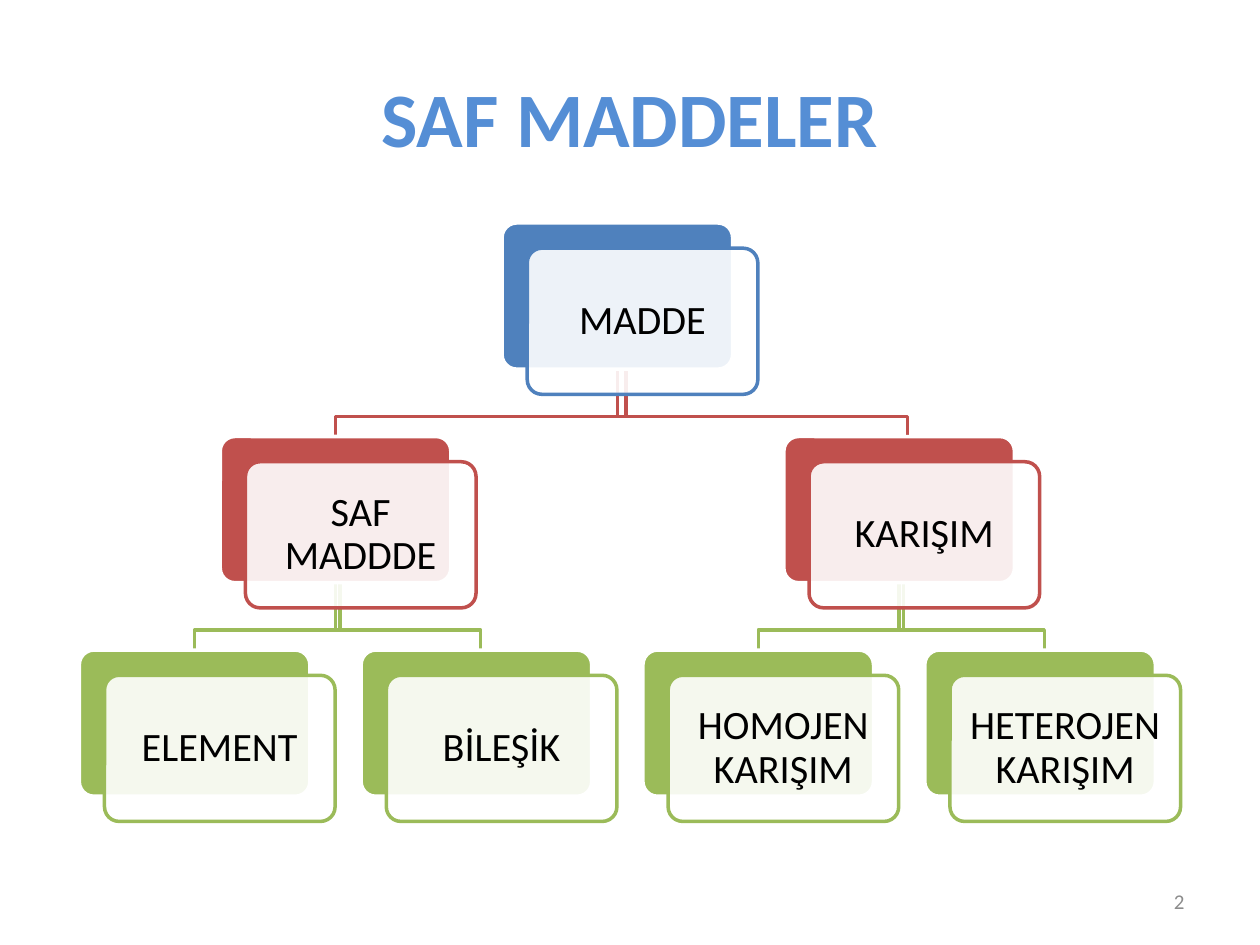
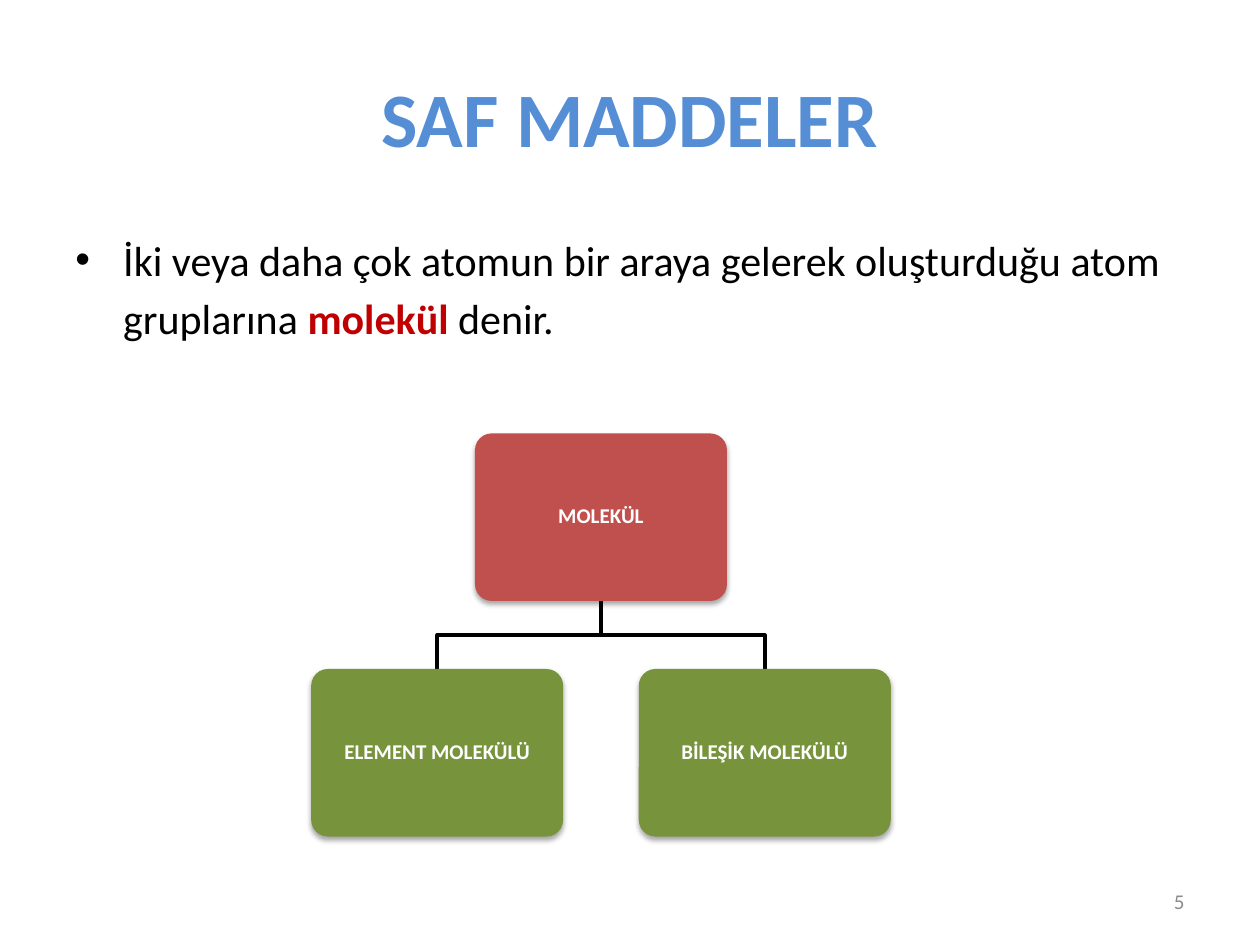
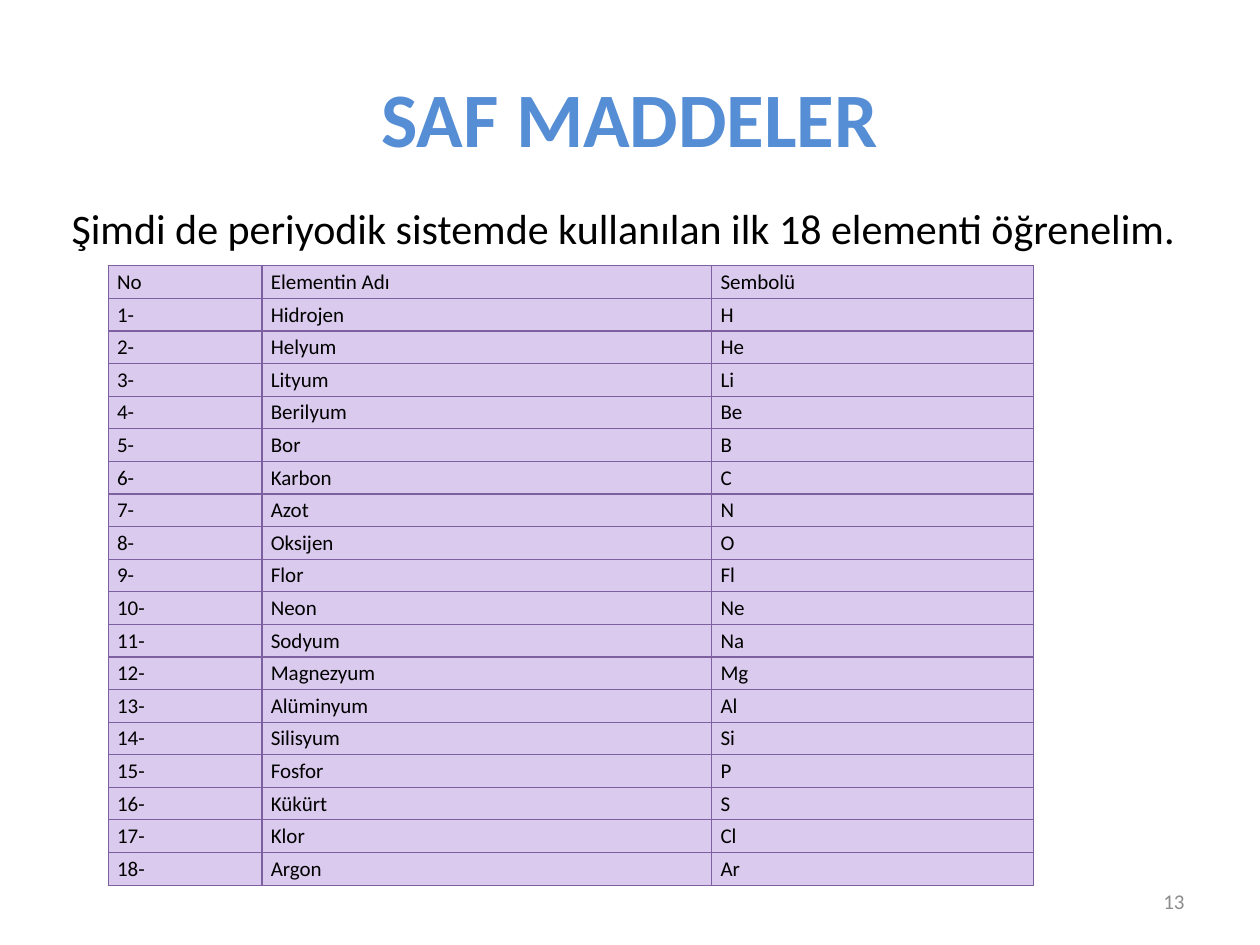
from lxml.etree import SubElement
from pptx import Presentation
from pptx.dml.color import RGBColor
from pptx.enum.shapes import MSO_SHAPE
from pptx.enum.text import MSO_ANCHOR, PP_ALIGN
from pptx.oxml.ns import qn
from pptx.util import Inches, Pt

SLIDE_W, SLIDE_H = 10, 7.5
FONT = "Calibri"
BLACK, WHITE, RED_TEXT = "000000", "FFFFFF", "C00000"
TITLE_BLUE, NUMBER_GRAY = "558ED5", "8C8C8C"
BLUE, RED, GREEN, DARK_GREEN = "4F81BD", "C0504D", "9BBB59", "77933C"
TABLE_FILL, TABLE_LINE = "DACAED", "7D60A0"

# Tree nodes: text, column, row, index of the parent
MATTER_TREE = [
    ("MADDE", 1.5, 0, None),
    ("SAF MADDDE", 0.5, 1, 0),
    ("KARIŞIM", 2.5, 1, 0),
    ("ELEMENT", 0, 2, 1),
    ("BİLEŞİK", 1, 2, 1),
    ("HOMOJEN KARIŞIM", 2, 2, 2),
    ("HETEROJEN KARIŞIM", 3, 2, 2),
]
MOLECULE_TREE = [
    ("MOLEKÜL", 0.5, 0, None),
    ("ELEMENT MOLEKÜLÜ", 0, 1, 0),
    ("BİLEŞİK MOLEKÜLÜ", 1, 1, 0),
]
# Per tree: grid size, card size, colours by row, elbow stretch and bend share
MATTER_STYLE = dict(columns=4, rows=3, card=(1.83, 1.16), fills=[BLUE, RED, GREEN],
                    lines=[BLUE, RED, GREEN], stretch=1.03, bend=0.68, layered=True)
MOLECULE_STYLE = dict(columns=2, rows=2, card=(2, 1.33), fills=[RED, DARK_GREEN],
                      lines=[BLACK, BLACK], stretch=1, bend=0.5, layered=False)
FRONT_SHIFT = 0.2

ELEMENTS = [
    ("Hidrojen", "H"), ("Helyum", "He"), ("Lityum", "Li"), ("Berilyum", "Be"),
    ("Bor", "B"), ("Karbon", "C"), ("Azot", "N"), ("Oksijen", "O"), ("Flor", "Fl"),
    ("Neon", "Ne"), ("Sodyum", "Na"), ("Magnezyum", "Mg"), ("Alüminyum", "Al"),
    ("Silisyum", "Si"), ("Fosfor", "P"), ("Kükürt", "S"), ("Klor", "Cl"), ("Argon", "Ar"),
]


def color(value):
    return RGBColor.from_string(value)


def inches(*values):
    return [Inches(value) for value in values]


def assign(target, values):
    for name, value in values.items():
        setattr(target, name, value)


def write(frame, spans, size, para_format=None, **frame_format):
    """Fill a text frame with one paragraph of (text, colour, bold) spans."""
    assign(frame, dict(word_wrap=True, **frame_format))
    para = frame.paragraphs[0]
    assign(para, para_format or {})
    for text, hue, bold in spans:
        span = para.add_run()
        span.text = text
        assign(span.font, dict(name=FONT, size=Pt(size), bold=bold))
        span.font.color.rgb = color(hue)
    return para


def add_text(page, box, spans, size, para_format=None, **frame_format):
    frame = page.shapes.add_textbox(*inches(*box)).text_frame
    return write(frame, spans, size, para_format, **frame_format)


def hang(para, bullet=None):
    properties = para._p.get_or_add_pPr()
    properties.set("marL", str(Inches(0.38)))
    properties.set("indent", str(-Inches(0.38)))
    if bullet:
        SubElement(properties, qn("a:buFont"), typeface="Arial")
        SubElement(properties, qn("a:buChar"), char=bullet)


# Shared frame of every slide
def add_page(deck, number):
    page = deck.slides.add_slide(deck.slide_layouts[6])
    add_text(page, (0.05 * SLIDE_W, 0.04 * SLIDE_H, 0.9 * SLIDE_W, 1.25),
             [("SAF MADDELER", TITLE_BLUE, True)], 44,
             dict(alignment=PP_ALIGN.CENTER), vertical_anchor=MSO_ANCHOR.MIDDLE)
    add_text(page, (7.17, 6.95, 2.33, 0.4), [(str(number), NUMBER_GRAY, False)], 12,
             dict(alignment=PP_ALIGN.RIGHT), vertical_anchor=MSO_ANCHOR.MIDDLE)
    return page


# Trees
def add_elbow(page, points, hue):
    corners = [inches(*point) for point in points]
    builder = page.shapes.build_freeform(*corners[0])
    builder.add_line_segments(corners[1:], close=False)
    elbow = builder.convert_to_shape()
    elbow.shadow.inherit = False
    elbow.fill.background()
    elbow.line.color.rgb = color(hue)
    elbow.line.width = Pt(2)


def add_card(page, box, fill, line=None, alpha=None):
    card = page.shapes.add_shape(MSO_SHAPE.ROUNDED_RECTANGLE, *inches(*box))
    card.adjustments[0] = 0.1
    card.shadow.inherit = False
    card.fill.solid()
    card.fill.fore_color.rgb = color(fill)
    if alpha:
        tone = card._element.spPr.find(qn("a:solidFill"))[0]
        SubElement(tone, qn("a:alpha"), val=str(alpha * 1000))
    if line:
        card.line.color.rgb = color(line)
        card.line.width = Pt(2)
    else:
        card.line.fill.background()
    return card


def add_soft_shadow(card):
    effects = card._element.spPr.find(qn("a:effectLst"))
    shadow = SubElement(effects, qn("a:outerShdw"), blurRad=str(Pt(3.1)), dist=str(Pt(1.8)),
                        dir="5400000", rotWithShape="0")
    tone = SubElement(shadow, qn("a:srgbClr"), val=BLACK)
    SubElement(tone, qn("a:alpha"), val="35000")


def add_node(page, box, text, fill, layered):
    left, top, width, height = box
    if layered:
        add_card(page, box, fill, WHITE)
        front = (left + FRONT_SHIFT, top + FRONT_SHIFT, width, height)
        card = add_card(page, front, WHITE, fill, alpha=90)
        span, size, inset = (text, BLACK, False), 23, Inches(0.1)
    else:
        card = add_card(page, box, fill)
        add_soft_shadow(card)
        span, size, inset = (text, WHITE, True), 12, Inches(0.05)
    sides = ("margin_left", "margin_top", "margin_right", "margin_bottom")
    write(card.text_frame, [span], size,
          dict(alignment=PP_ALIGN.CENTER, line_spacing=0.9),
          vertical_anchor=MSO_ANCHOR.MIDDLE, **dict.fromkeys(sides, inset))


def add_tree(page, box, nodes, style):
    left, top, width, height = box
    card_w, card_h = style["card"]
    column_step = (width - card_w) / (style["columns"] - 1)
    row_step = (height - card_h) / (style["rows"] - 1)
    corners = [(left + column * column_step, top + row * row_step)
               for _, column, row, _ in nodes]

    # Elbows from each parent to its children, behind the cards
    for (_, _, row, parent), (child_x, child_y) in zip(nodes, corners):
        if parent is None:
            continue
        parent_x = corners[parent][0]
        start_y = corners[parent][1] + card_h
        anchor = min(parent_x, child_x)
        from_x, to_x = [anchor + (x - anchor) * style["stretch"] + card_w / 2
                        for x in (parent_x, child_x)]
        drop = (child_y - start_y) * style["stretch"]
        bend_y = start_y + drop * style["bend"]
        add_elbow(page, [(from_x, start_y), (from_x, bend_y), (to_x, bend_y),
                         (to_x, start_y + drop)], style["lines"][row])

    for (text, _, row, _), corner in zip(nodes, corners):
        add_node(page, (*corner, card_w, card_h), text, style["fills"][row], style["layered"])


# Table
def style_cell(cell, text):
    properties = cell._tc.get_or_add_tcPr()
    for side in ("lnL", "lnR", "lnT", "lnB"):
        border = SubElement(properties, qn(f"a:{side}"), w=str(Pt(0.75)))
        SubElement(SubElement(border, qn("a:solidFill")), qn("a:srgbClr"), val=TABLE_LINE)
    cell.fill.solid()
    cell.fill.fore_color.rgb = color(TABLE_FILL)
    assign(cell, dict(margin_left=Inches(0.07), margin_right=Inches(0.07),
                      margin_top=0, margin_bottom=0))
    write(cell.text_frame, [(text, BLACK, False)], 12, dict(line_spacing=1.15))


def add_element_table(page, box):
    rows = [("No", "Elementin Adı", "Sembolü")]
    rows += [(f"{number}-", *element) for number, element in enumerate(ELEMENTS, 1)]
    table = page.shapes.add_table(len(rows), 3, *inches(*box)).table
    assign(table, dict(first_row=False, horz_banding=False))
    for column, width in zip(table.columns, (1.22, 3.57, 2.55)):
        column.width = Inches(width)
    for row, texts in zip(table.rows, rows):
        for cell, text in zip(row.cells, texts):
            style_cell(cell, text)


# Slides
def matter_slide(deck):
    page = add_page(deck, 2)
    add_tree(page, (0.63, 1.77, 8.54, 4.55), MATTER_TREE, MATTER_STYLE)


def molecule_slide(deck):
    page = add_page(deck, 5)
    para = add_text(page, (0.5, 1.75, 9, 4.95), [
        ("İki veya daha çok atomun bir araya gelerek oluşturduğu atom gruplarına ", BLACK, False),
        ("molekül ", RED_TEXT, True),
        ("denir.", BLACK, False),
    ], 24, dict(line_spacing=1.15, space_before=Pt(4.8), space_after=Pt(10)))
    hang(para, "•")
    add_tree(page, (2.47, 3.44, 4.6, 3.2), MOLECULE_TREE, MOLECULE_STYLE)


def element_slide(deck):
    page = add_page(deck, 13)
    para = add_text(page, (0.47, 1.56, 9.06, 5.78), [
        ("Şimdi de periyodik sistemde kullanılan ilk 18 elementi öğrenelim.", BLACK, False),
    ], 24, dict(space_before=Pt(4.8)))
    hang(para)
    add_element_table(page, (0.86, 2.11, 7.34, 4.92))


def main():
    deck = Presentation()
    assign(deck, dict(slide_width=Inches(SLIDE_W), slide_height=Inches(SLIDE_H)))
    for build in (matter_slide, molecule_slide, element_slide):
        build(deck)
    deck.save("out.pptx")


if __name__ == "__main__":
    main()
